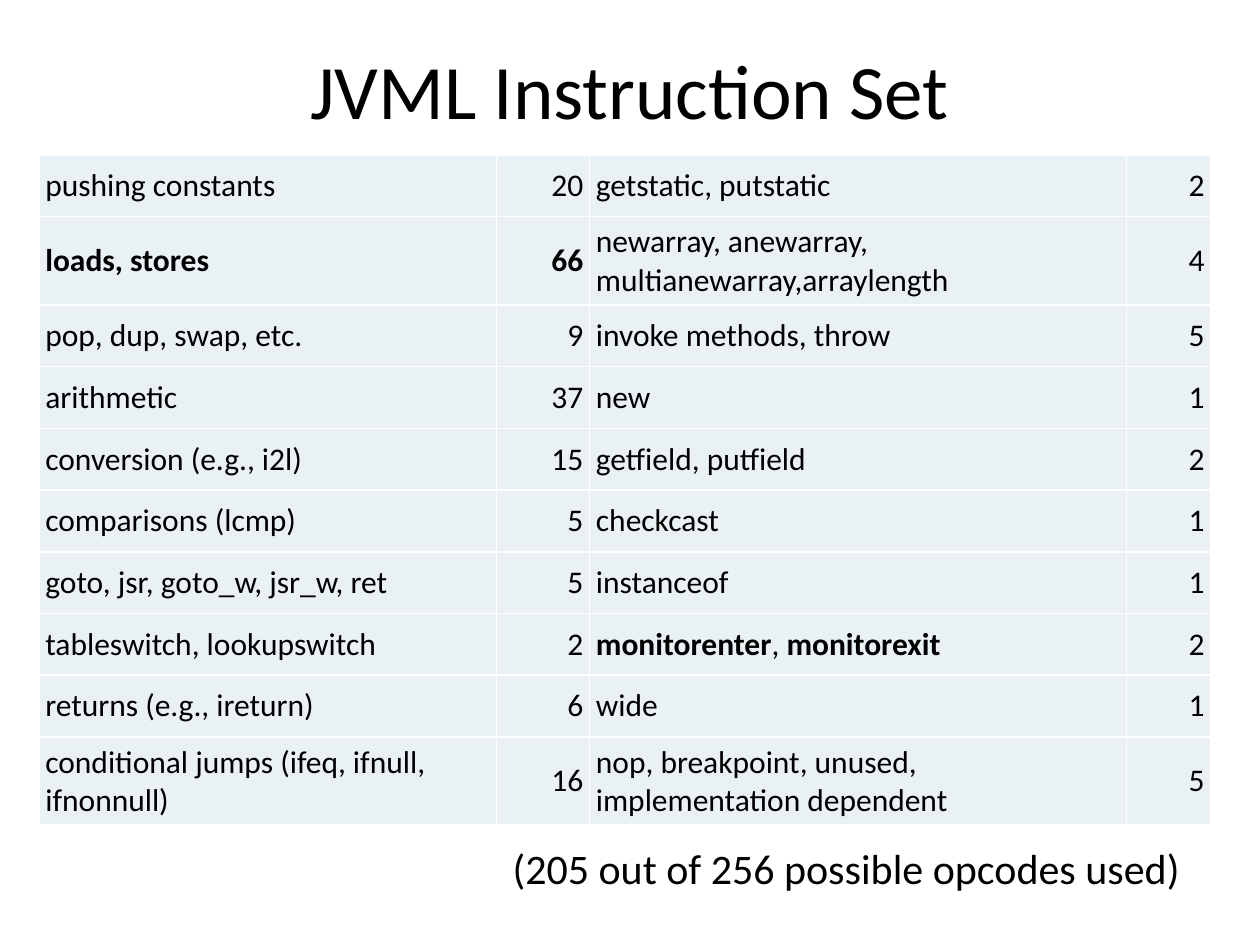
from lxml import etree
from pptx import Presentation
from pptx.dml.color import RGBColor
from pptx.enum.text import MSO_ANCHOR, PP_ALIGN
from pptx.oxml.ns import qn
from pptx.util import Inches, Pt

LEFT, CENTER, RIGHT = PP_ALIGN.LEFT, PP_ALIGN.CENTER, PP_ALIGN.RIGHT
MIDDLE, TOP = MSO_ANCHOR.MIDDLE, MSO_ANCHOR.TOP
BLACK = RGBColor(0x00, 0x00, 0x00)
WHITE = RGBColor(0xFF, 0xFF, 0xFF)
CELL_FILL = RGBColor(0xE9, 0xF1, 0xF5)
FONT = "Calibri"

TITLE = "JVML Instruction Set"
FOOTNOTE = "(205 out of 256 possible opcodes used)"
# Instruction group and opcode count, twice per row
ROWS = [
    ("pushing constants", 20, "getstatic, putstatic", 2),
    ("loads, stores", 66, "newarray, anewarray, multianewarray,arraylength", 4),
    ("pop, dup, swap, etc.", 9, "invoke methods, throw", 5),
    ("arithmetic", 37, "new", 1),
    ("conversion (e.g., i2l)", 15, "getfield, putfield", 2),
    ("comparisons (lcmp)", 5, "checkcast", 1),
    ("goto, jsr, goto_w, jsr_w, ret", 5, "instanceof", 1),
    ("tableswitch, lookupswitch", 2, ("monitorenter", ", ", "monitorexit"), 2),
    ("returns (e.g., ireturn)", 6, "wide", 1),
    ("conditional jumps (ifeq, ifnull, ifnonnull)", 16,
     "nop, breakpoint, unused, implementation dependent", 5),
]
BOLD_TEXTS = {"loads, stores", "66", "monitorenter", "monitorexit"}
COLUMN_WIDTHS = [3.63, 0.74, 4.26, 0.67]
ROW_HEIGHT = 0.49
CELL_MARGIN = 0.05


def write(text_frame, texts, size, alignment):
    paragraph = text_frame.paragraphs[0]
    paragraph.alignment = alignment
    for text in texts:
        run = paragraph.add_run()
        run.text = text
        run.font.name = FONT
        run.font.size = Pt(size)
        run.font.bold = text in BOLD_TEXTS
        run.font.color.rgb = BLACK


def add_text(slide, text, box, size, alignment, anchor):
    shape = slide.shapes.add_textbox(*map(Inches, box))
    shape.text_frame.word_wrap = True
    shape.text_frame.vertical_anchor = anchor
    write(shape.text_frame, [text], size, alignment)


def add_borders(cell):
    properties = cell._tc.get_or_add_tcPr()
    for index, side in enumerate(("a:lnL", "a:lnR", "a:lnT", "a:lnB")):
        line = etree.Element(qn(side), w=str(Pt(1)))
        fill = etree.SubElement(line, qn("a:solidFill"))
        etree.SubElement(fill, qn("a:srgbClr"), val=str(WHITE))
        properties.insert(index, line)


def add_instruction_table(slide):
    table = slide.shapes.add_table(
        len(ROWS), len(COLUMN_WIDTHS), Inches(0.31), Inches(1.23),
        Inches(sum(COLUMN_WIDTHS)), Inches(ROW_HEIGHT * len(ROWS))).table
    table.first_row = table.horz_banding = False
    for column, width in zip(table.columns, COLUMN_WIDTHS):
        column.width = Inches(width)
    for row_index, values in enumerate(ROWS):
        table.rows[row_index].height = Inches(ROW_HEIGHT)
        for column_index, value in enumerate(values):
            cell = table.cell(row_index, column_index)
            cell.margin_left = cell.margin_right = Inches(CELL_MARGIN)
            cell.margin_top = cell.margin_bottom = Inches(CELL_MARGIN)
            cell.vertical_anchor = MIDDLE
            cell.fill.solid()
            cell.fill.fore_color.rgb = CELL_FILL
            add_borders(cell)
            texts = value if isinstance(value, tuple) else [str(value)]
            write(cell.text_frame, texts, 18,
                  RIGHT if isinstance(value, int) else LEFT)


def main():
    presentation = Presentation()
    presentation.slide_width = Inches(10)
    presentation.slide_height = Inches(7.5)
    slide = presentation.slides.add_slide(presentation.slide_layouts[6])
    add_text(slide, TITLE, (0.5, 0.08, 9, 1.25), 44, CENTER, MIDDLE)
    add_instruction_table(slide)
    add_text(slide, FOOTNOTE, (3.97, 6.64, 5.64, 0.5), 24, LEFT, TOP)
    presentation.save("out.pptx")


if __name__ == "__main__":
    main()
